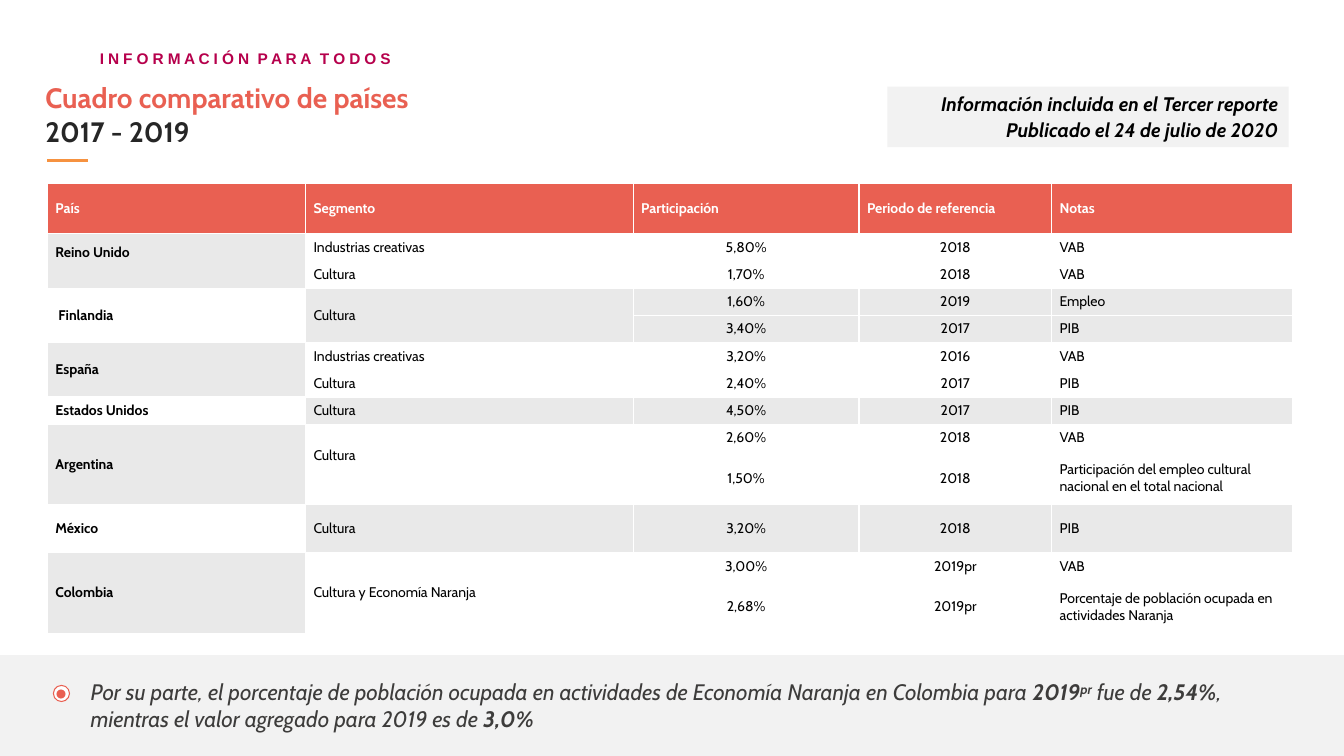
from lxml import etree
from pptx import Presentation
from pptx import util as u
from pptx.dml.color import RGBColor
from pptx.enum import shapes, text
from pptx.oxml.ns import qn

CORAL, MAGENTA, ORANGE = "E96052", "B6004C", "F69240"
WHITE, BLACK, DARK, CHARCOAL = "FFFFFF", "000000", "262626", "3D3C3B"
PALE, BAND = "F2F2F2", "E9E9E9"
LEFT, CENTER, RIGHT = text.PP_ALIGN.LEFT, text.PP_ALIGN.CENTER, text.PP_ALIGN.RIGHT

COLUMN_WIDTHS = [2.56, 3.25, 2.24, 1.91, 2.39]
ROW_HEIGHTS = [0.5] + [0.27] * 8 + [0.53, 0.47, 0.28, 0.53]
HEADINGS = ["País", "Segmento", "Participación", "Periodo de referencia", "Notas"]
COUNTRIES = [
    ("Reino Unido", [
        ("Industrias creativas", "5,80%", "2018", "VAB"),
        ("Cultura", "1,70%", "2018", "VAB")]),
    ("Finlandia", [
        ("Cultura", "1,60%", "2019", "Empleo"),
        (None, "3,40%", "2017", "PIB")]),
    ("España", [
        ("Industrias creativas", "3,20%", "2016", "VAB"),
        ("Cultura", "2,40%", "2017", "PIB")]),
    ("Estados Unidos", [("Cultura", "4,50%", "2017", "PIB")]),
    ("Argentina", [
        ("Cultura", "2,60%", "2018", "VAB"),
        (None, "1,50%", "2018",
         "Participación del empleo cultural nacional en el total nacional")]),
    ("México", [("Cultura", "3,20%", "2018", "PIB")]),
    ("Colombia", [
        ("Cultura y Economía Naranja", "3,00%", "2019pr", "VAB"),
        (None, "2,68%", "2019pr",
         "Porcentaje de población ocupada en actividades Naranja")]),
]


def color(value):
    return RGBColor.from_string(value)


def add_run(paragraph, words, size, ink, bold=False, italic=False, font="Cabin", **extras):
    run = paragraph.add_run()
    run.text = words
    run.font.size = u.Pt(size)
    run.font.name = font
    run.font.bold = bold
    run.font.italic = italic
    run.font.color.rgb = color(ink)
    for name, value in extras.items():
        run._r.get_or_add_rPr().set(name, str(value))


def set_margins(frame, left, top, right, bottom):
    frame.margin_left, frame.margin_top = u.Inches(left), u.Inches(top)
    frame.margin_right, frame.margin_bottom = u.Inches(right), u.Inches(bottom)


def add_frame(slide, left, top, width, height, margins):
    box = slide.shapes.add_textbox(*map(u.Inches, (left, top, width, height)))
    box.text_frame.word_wrap = True
    set_margins(box.text_frame, *margins)
    return box.text_frame


def add_block(parent, kind, left, top, width, height, fill, outline=None):
    block = parent.shapes.add_shape(kind, *map(u.Inches, (left, top, width, height)))
    block.shadow.inherit = False
    block.fill.solid()
    block.fill.fore_color.rgb = color(fill)
    if outline:
        block.line.color.rgb = color(outline)
        block.line.width = u.Pt(0.75)
    else:
        block.line.fill.background()
    return block


def add_slogan(slide):
    paragraph = add_frame(slide, 0.99, 0.4, 4.1, 0.25, (0, 0.03, 0, 0)).paragraphs[0]
    paragraph.line_spacing = 1.3
    for index, word in enumerate(["INFORMACIÓN", "PARA", "TODOS"]):
        if index:
            add_run(paragraph, " ", 11, MAGENTA, True, font="Arial", spc=300)
        add_run(paragraph, " ".join(word), 11, MAGENTA, True, font="Arial", spc=-10)


def add_title(slide):
    frame = add_frame(slide, 0.43, 0.8, 8, 0.67, (0.02, 0, 0, 0))
    add_run(frame.paragraphs[0], "Cuadro comparativo de países", 20, CORAL, True)
    add_run(frame.add_paragraph(), "2017 - 2019", 20, DARK, True)
    accent = slide.shapes.add_connector(
        shapes.MSO_CONNECTOR.STRAIGHT, *map(u.Inches, (0.47, 1.59, 0.87, 1.59)))
    accent.line.color.rgb = color(ORANGE)
    accent.line.width = u.Pt(2.25)
    etree.SubElement(accent._element.spPr, qn("a:effectLst"))


def add_report_note(slide):
    note = add_block(slide, shapes.MSO_SHAPE.RECTANGLE, 8.8, 0.86, 3.98, 0.6, PALE)
    frame = note.text_frame
    frame.word_wrap = True
    first, second = frame.paragraphs[0], frame.add_paragraph()
    second.space_before = u.Pt(1.7)
    for paragraph, words in ((first, "Información incluida en el Tercer reporte"),
                             (second, "Publicado el 24 de julio de 2020")):
        paragraph.alignment = RIGHT
        add_run(paragraph, words, 14, BLACK, True, True)


def add_borders(cell):
    properties = cell._tc.get_or_add_tcPr()
    for side in ("a:lnL", "a:lnR", "a:lnT", "a:lnB"):
        border = etree.SubElement(properties, qn(side), w=str(u.Pt(1)))
        fill = etree.SubElement(border, qn("a:solidFill"))
        etree.SubElement(fill, qn("a:srgbClr"), val=WHITE)


def paint_cell(cell, fill):
    add_borders(cell)
    cell.fill.solid()
    cell.fill.fore_color.rgb = color(fill)


def write_cell(cell, words, ink=BLACK, bold=False, align=LEFT, indent=0, lift=0):
    cell.vertical_anchor = text.MSO_ANCHOR.MIDDLE
    set_margins(cell, 0.08 + indent, 0, 0.08, lift)
    paragraph = cell.text_frame.paragraphs[0]
    paragraph.alignment = align
    add_run(paragraph, words, 10, ink, bold)


def add_country(table, top, country, records, shaded):
    bottom = top + len(records) - 1
    country_fill, data_fill = (BAND, WHITE) if shaded else (WHITE, BAND)
    for row, record in enumerate(records, top):
        for column in range(len(HEADINGS)):
            paint_cell(table.cell(row, column), data_fill if column else country_fill)
        segment, share, period, remark = record
        if segment:
            write_cell(table.cell(row, 1), segment,
                       lift=0.17 if country == "Argentina" else 0)
        else:
            table.cell(row - 1, 1).merge(table.cell(row, 1))
        write_cell(table.cell(row, 2), share, align=CENTER)
        write_cell(table.cell(row, 3), period, align=CENTER)
        write_cell(table.cell(row, 4), remark)
    if bottom > top:
        table.cell(top, 0).merge(table.cell(bottom, 0))
    write_cell(table.cell(top, 0), country, bold=True,
               indent=0.03 if country == "Finlandia" else 0,
               lift=0.17 if country == "Reino Unido" else 0)
    return bottom + 1


def add_comparison(slide):
    table = slide.shapes.add_table(
        len(ROW_HEIGHTS), len(HEADINGS),
        *map(u.Inches, (0.47, 1.82, sum(COLUMN_WIDTHS), sum(ROW_HEIGHTS)))).table
    table.horz_banding = False
    for column, width in zip(table.columns, COLUMN_WIDTHS):
        column.width = u.Inches(width)
    for row, height in zip(table.rows, ROW_HEIGHTS):
        row.height = u.Inches(height)
    for column, heading in enumerate(HEADINGS):
        paint_cell(table.cell(0, column), CORAL)
        write_cell(table.cell(0, column), heading, WHITE, True)
    top = 1
    for index, (country, records) in enumerate(COUNTRIES):
        top = add_country(table, top, country, records, index % 2 == 0)


def add_conclusion(slide):
    add_block(slide, shapes.MSO_SHAPE.RECTANGLE, 0, 6.5, 13.33, 1, PALE)
    frame = add_frame(slide, 0.77, 6.66, 12.1, 0.67, (0.13, 0.07, 0.13, 0.07))
    pieces = [
        ("Por su parte, el porcentaje de población ocupada en actividades de "
         "Economía Naranja en Colombia para ", False, {}),
        ("2019", True, {}),
        ("pr", True, {"baseline": 30000}),
        (" fue de ", False, {}),
        ("2,54%", True, {}),
        (", mientras el valor agregado para 2019 es de ", False, {}),
        ("3,0%", True, {}),
    ]
    for words, bold, extras in pieces:
        add_run(frame.paragraphs[0], words, 16, CHARCOAL, bold, True, **extras)
    marker = slide.shapes.add_group_shape()
    add_block(marker, shapes.MSO_SHAPE.OVAL, 0.53, 6.8, 0.16, 0.16, WHITE, CORAL)
    add_block(marker, shapes.MSO_SHAPE.OVAL, 0.56, 6.84, 0.09, 0.09, CORAL)


def main():
    deck = Presentation()
    deck.slide_width, deck.slide_height = u.Inches(13.33), u.Inches(7.5)
    slide = deck.slides.add_slide(deck.slide_layouts[6])
    add_slogan(slide)
    add_title(slide)
    add_report_note(slide)
    add_comparison(slide)
    add_conclusion(slide)
    deck.save("out.pptx")


if __name__ == "__main__":
    main()
